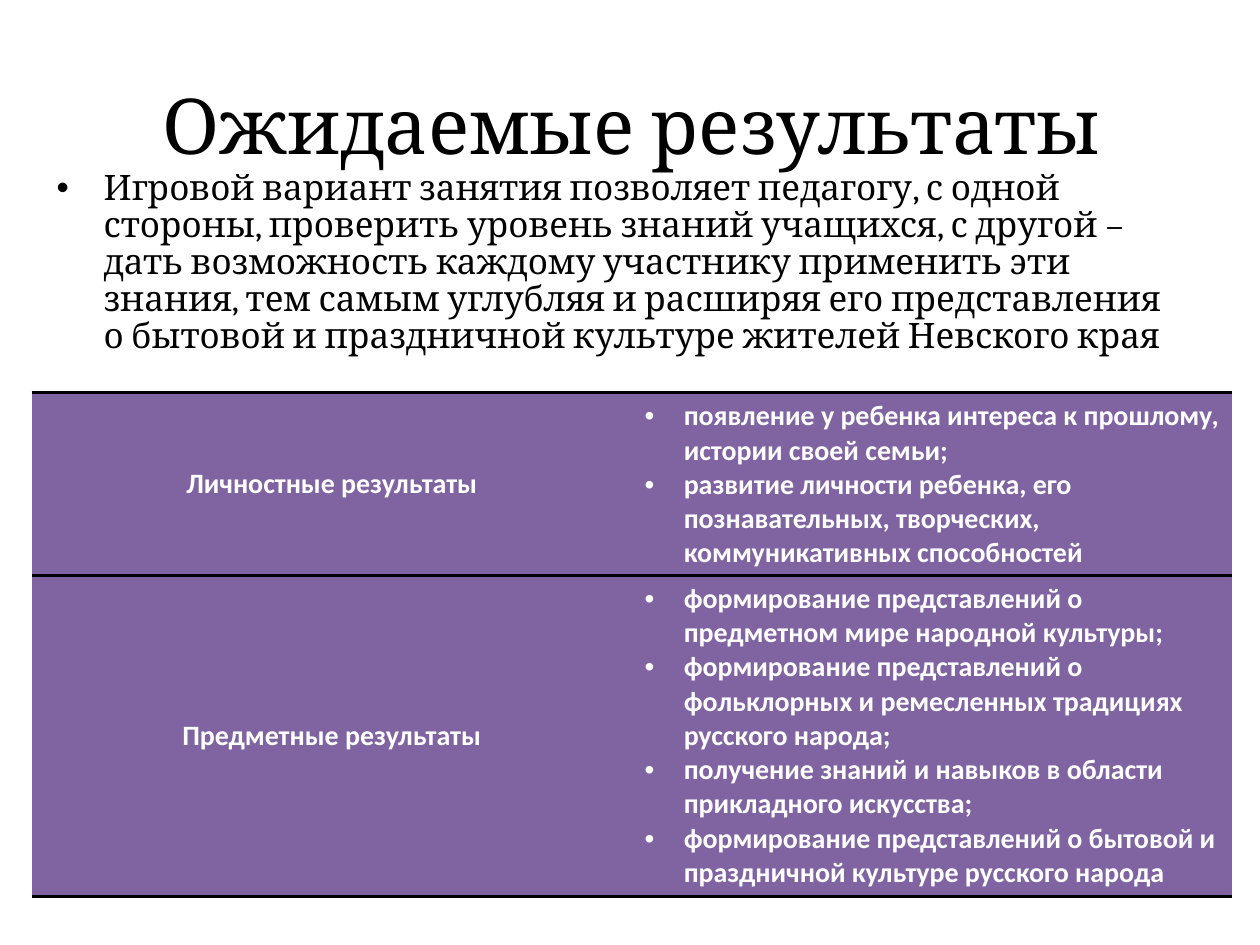
from lxml import etree
from pptx import Presentation, util as u
from pptx.dml.color import RGBColor
from pptx.enum import text
from pptx.oxml.ns import qn

COLORS = {"black": "000000", "white": "FFFFFF", "purple": "8064A2"}

RESULTS = [
    ("Личностные результаты", [
        "появление у ребенка интереса к прошлому, истории своей семьи;",
        "развитие личности ребенка, его познавательных, творческих, "
        "коммуникативных способностей",
    ]),
    ("Предметные результаты", [
        "формирование представлений о предметном мире народной культуры;",
        "формирование представлений о фольклорных и ремесленных традициях "
        "русского народа;",
        "получение знаний и навыков в области прикладного искусства;",
        "формирование представлений о бытовой и праздничной культуре "
        "русского народа",
    ]),
]
ROW_HEIGHTS = [3.68, 6.48]


class Deck:
    def __init__(self, width, height):
        self.prs = Presentation()
        self.prs.slide_width, self.prs.slide_height = u.Cm(width), u.Cm(height)
        self.s = None

    def add_slide(self):
        self.s = self.prs.slides.add_slide(self.prs.slide_layouts[6])

    def color(self, name):
        return RGBColor.from_string(COLORS[name])

    def bullet(self, p, indent):
        """Give the paragraph a round bullet with a hanging indent."""
        pPr = p._p.get_or_add_pPr()
        pPr.set("marL", str(u.Cm(indent)))
        pPr.set("indent", str(-u.Cm(indent)))
        etree.SubElement(pPr, qn("a:buFont")).set("typeface", "Arial")
        etree.SubElement(pPr, qn("a:buChar")).set("char", "•")

    def set_lines(self, tf, lines, font, size, color, bold=False, indent=0, align=None):
        tf.text = "\n".join(lines)
        for p in tf.paragraphs:
            p.alignment = align
            if indent:
                self.bullet(p, indent)
            for r in p.runs:
                r.font.name, r.font.size, r.font.bold = font, u.Pt(size), bold
                r.font.color.rgb = self.color(color)

    def text_box(self, x, y, w, h, lines, anchor, spacing=1.0, **style):
        sp = self.s.shapes.add_textbox(u.Cm(x), u.Cm(y), u.Cm(w), u.Cm(h))
        tf = sp.text_frame
        tf.word_wrap = True
        tf.vertical_anchor = anchor
        self.set_lines(tf, lines, "Cambria", color="black", **style)
        for p in tf.paragraphs:
            p.line_spacing = spacing

    def borders(self, cell):
        """Rule the cell above and below, leaving its sides open."""
        tcPr = cell._tc.get_or_add_tcPr()
        for side in "LRTB":
            ln = etree.SubElement(tcPr, qn(f"a:ln{side}"))
            if side in "LR":
                etree.SubElement(ln, qn("a:noFill"))
            else:
                ln.set("w", str(u.Pt(2)))
                fill = etree.SubElement(ln, qn("a:solidFill"))
                etree.SubElement(fill, qn("a:srgbClr")).set("val", COLORS["black"])

    def fill_cell(self, cell, lines, **style):
        self.borders(cell)
        cell.fill.solid()
        cell.fill.fore_color.rgb = self.color("purple")
        self.set_lines(cell.text_frame, lines, "Calibri", 16, "white", bold=True, **style)

    def results_table(self, x, y, w, rows, heights):
        shape = self.s.shapes.add_table(len(rows), 2, u.Cm(x), u.Cm(y),
                                        u.Cm(w), u.Cm(sum(heights)))
        table = shape.table
        for i, (name, items) in enumerate(rows):
            table.rows[i].height = u.Cm(heights[i])
            heading, details = table.cell(i, 0), table.cell(i, 1)
            self.fill_cell(heading, [name], align=text.PP_ALIGN.CENTER)
            heading.vertical_anchor = text.MSO_ANCHOR.MIDDLE
            self.fill_cell(details, items, indent=0.79)


def main():
    deck = Deck(25.4, 19.05)
    deck.add_slide()
    deck.text_box(1.3, 1.09, 22.86, 2.8, ["Ожидаемые результаты"],
                  text.MSO_ANCHOR.MIDDLE, size=44, align=text.PP_ALIGN.CENTER)
    deck.text_box(0.89, 3.33, 23.27, 4.6, [
        "Игровой вариант занятия позволяет педагогу, с одной стороны, "
        "проверить уровень знаний учащихся, с другой – дать возможность "
        "каждому участнику применить эти знания, тем самым углубляя и "
        "расширяя его представления о бытовой и праздничной культуре "
        "жителей Невского края",
    ], text.MSO_ANCHOR.TOP, spacing=0.88, size=20, indent=0.95)
    deck.results_table(0.64, 7.92, 24.2, RESULTS, ROW_HEIGHTS)
    deck.prs.save("out.pptx")


if __name__ == "__main__":
    main()
